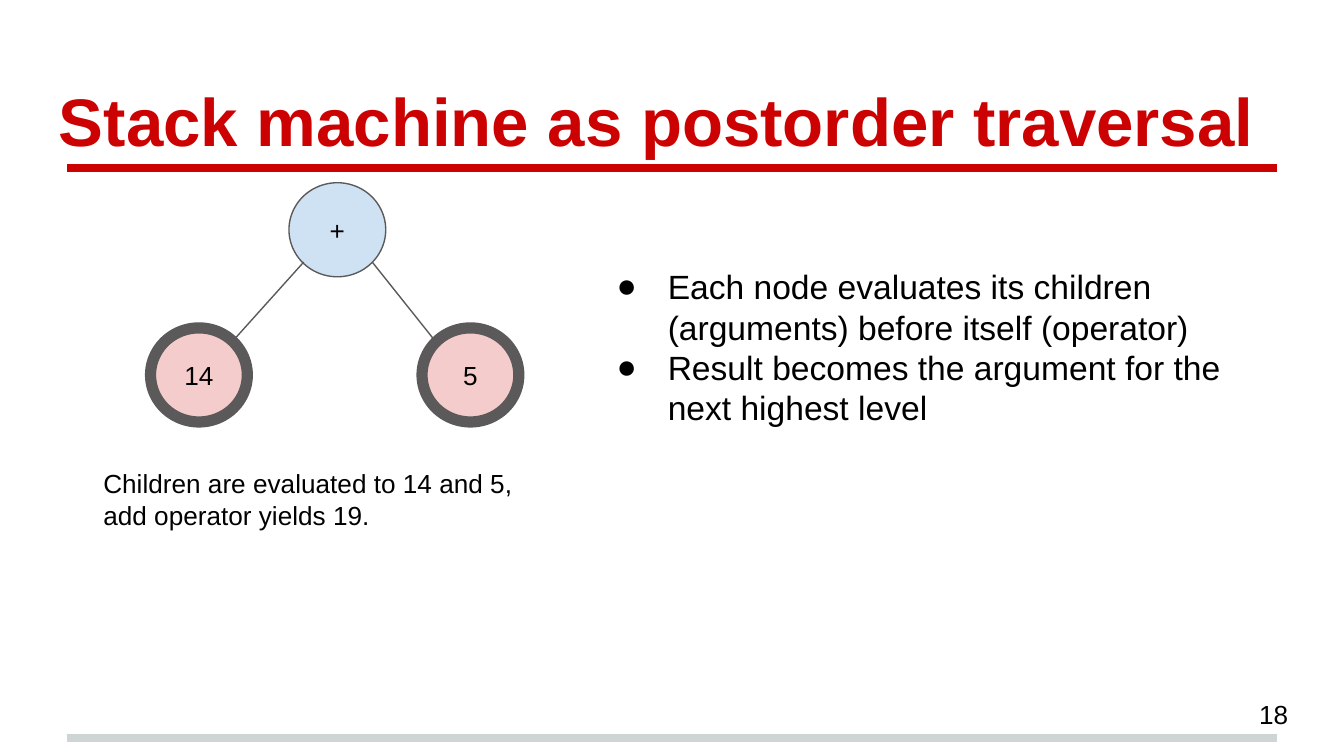
import pptx
import pptx.util
import pptx.dml.color
import pptx.enum.shapes
import pptx.enum.text
import pptx.oxml.ns
from lxml import etree

Inches = pptx.util.Inches
Pt = pptx.util.Pt
Align = pptx.enum.text.PP_ALIGN
Anchor = pptx.enum.text.MSO_ANCHOR
Kind = pptx.enum.shapes.MSO_SHAPE
qn = pptx.oxml.ns.qn

WIDE = 10
HIGH = WIDE * 9 / 16
HUES = {"red": "CC0202", "gray": "CFD4D4", "edge": "5B595A",
        "blue": "CFE2F3", "pink": "F4CCCC", "ink": "000000"}


def hue(name):
    return pptx.dml.color.RGBColor.from_string(HUES[name])


def apply(item, form):
    for key, value in form.items():
        setattr(item, key, value)


def write(shape, lines, size=14, color="ink", bold=False, align=Align.LEFT,
          anchor=Anchor.TOP):
    frame = shape.text_frame
    inset = Inches(0.1)
    apply(frame, {"word_wrap": True, "vertical_anchor": anchor,
                  "margin_left": inset, "margin_right": inset,
                  "margin_top": inset, "margin_bottom": inset})
    frame.text = "\n".join(lines)
    for para in frame.paragraphs:
        para.alignment = align
        for run in para.runs:
            apply(run.font, {"name": "Arial", "size": Pt(size), "bold": bold})
            run.font.color.rgb = hue(color)
    return frame


def add_text(slide, box, lines, **form):
    shape = slide.shapes.add_textbox(*map(Inches, box))
    return write(shape, lines, **form)


def add_line(slide, start, end, color, width):
    line = slide.shapes.add_connector(
        pptx.enum.shapes.MSO_CONNECTOR.STRAIGHT,
        *map(Inches, (*start, *end)))
    line.line.color.rgb = hue(color)
    line.line.width = Pt(width)
    etree.SubElement(line._element.spPr, qn("a:effectLst"))


def add_node(slide, box, label, fill, width):
    node = slide.shapes.add_shape(Kind.OVAL, *map(Inches, box))
    node.shadow.inherit = False
    node.fill.solid()
    node.fill.fore_color.rgb = hue(fill)
    node.line.color.rgb = hue("edge")
    node.line.width = Pt(width)
    write(node, [label], align=Align.CENTER, anchor=Anchor.MIDDLE)


def add_head(slide, box):
    left, top, wide, high = box
    add_line(slide, (left + 0.16, top + 0.76),
             (left + wide - 0.16, top + 0.76), "red", 4)
    add_text(slide, box, ["Stack machine as postorder traversal"],
             size=36, color="red", bold=True)


def add_tree(slide, box):
    left, top, wide, high = box
    w, h = 0.72, 0.7
    root = left + 1.03
    low = top + high - h
    add_node(slide, (root, top, w, h), "+", "blue", 0.75)
    for x, label, side in ((left, "14", 0), (left + wide - w, "5", 1)):
        add_node(slide, (x, low, w, h), label, "pink", 6)
        start = root + (w - 0.1 if side else 0.11)
        end = x + (0.1 if side else w - 0.11)
        add_line(slide, (start, top + 0.59), (end, low + 0.1), "edge", 0.75)


def add_list(slide, box, lines):
    frame = add_text(slide, box, lines, size=18)
    for para in frame.paragraphs:
        props = para._p.get_or_add_pPr()
        props.set("marL", str(Inches(0.5)))
        props.set("indent", str(Inches(-0.38)))
        etree.SubElement(props, qn("a:buFont")).set("typeface", "Arial")
        etree.SubElement(props, qn("a:buChar")).set("char", "●")


def add_foot(slide, box):
    left, top, wide, high = box
    add_line(slide, (left, top + 0.39), (left + 9, top + 0.39), "gray", 4)
    add_text(slide, (left + 8.77, top, 0.6, high), ["18"],
             anchor=Anchor.MIDDLE)


def main():
    deck = pptx.Presentation()
    apply(deck, {"slide_width": Inches(WIDE), "slide_height": Inches(HIGH)})
    slide = deck.slides.add_slide(deck.slide_layouts[6])
    add_head(slide, (0.34, 0.49, 9.32, 0.63))
    add_tree(slide, (1.12, 1.36, 2.74, 1.78))
    add_list(slide, (4.37, 1.88, 4.99, 2.81), [
        "Each node evaluates its children (arguments) before itself (operator)",
        "Result becomes the argument for the next highest level"])
    add_text(slide, (0.67, 3.38, 4.99, 0.7), [
        "Children are evaluated to 14 and 5,", "add operator yields 19."])
    add_foot(slide, (0.5, 5.1, 9.37, 0.43))
    deck.save("out.pptx")


if __name__ == "__main__":
    main()
